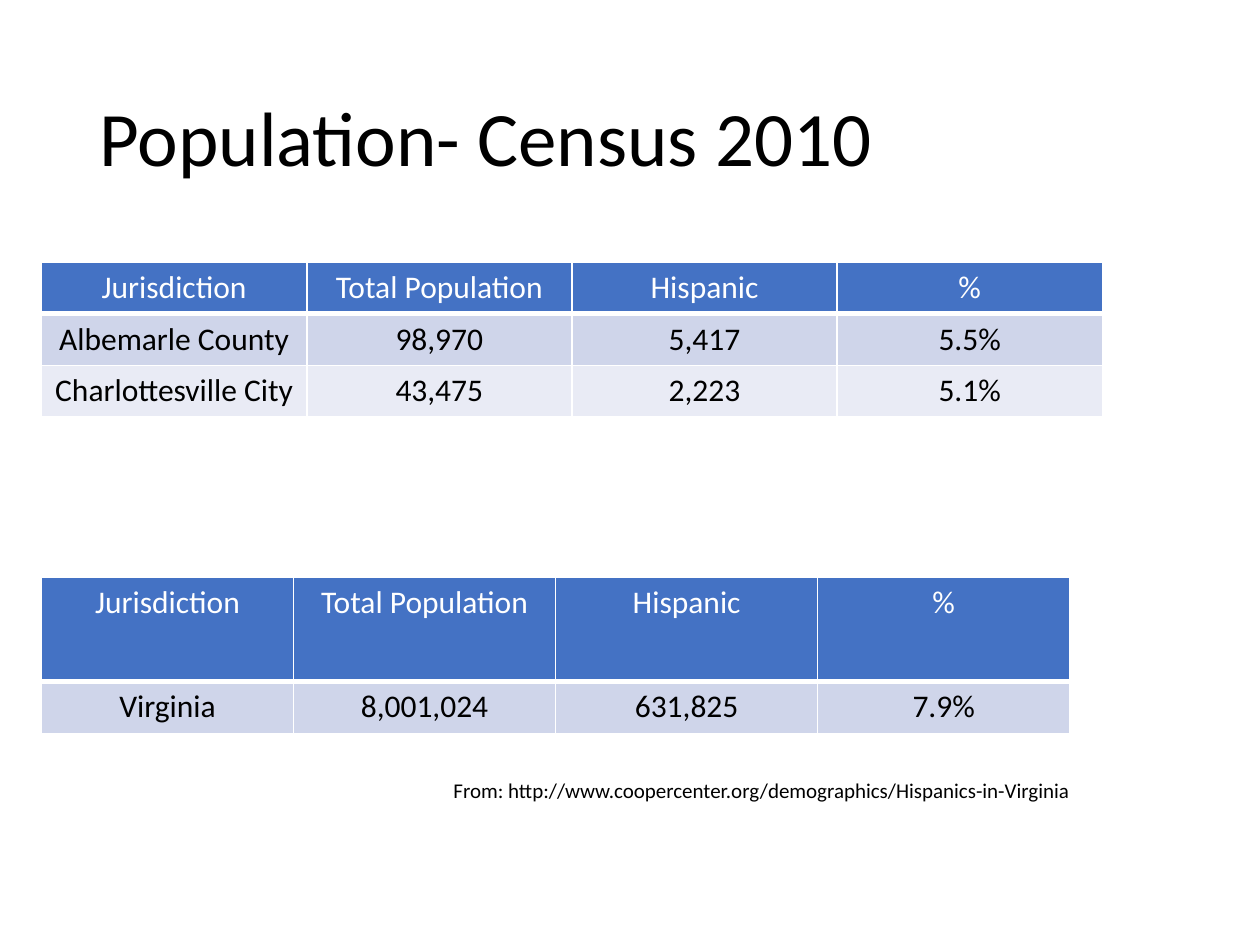
from dataclasses import dataclass

from pptx import Presentation
from pptx import util as u
from pptx.dml.color import RGBColor
from pptx.enum import text
from pptx.oxml import parse_xml
from pptx.oxml.ns import nsdecls


@dataclass(frozen=True)
class Theme:
    font: str = "Calibri"
    ink: str = "000000"
    white: str = "FFFFFF"
    header: str = "4472C4"
    bands: tuple = ("CFD5EA", "E9EBF5")
    title_size: int = 44
    table_size: int = 18
    source_size: int = 12
    thin: int = 1
    thick: int = 3


class SlideBuilder:
    def __init__(self, slide, theme):
        self.slide = slide
        self.theme = theme

    def add_run(self, p, content, size, color):
        r = p.add_run()
        r.text = content
        r.font.name = self.theme.font
        r.font.size = u.Pt(size)
        r.font.bold = False
        r.font.color.rgb = RGBColor.from_string(color)

    def add_text(self, box, content, size, anchor=text.MSO_ANCHOR.TOP, spacing=1.0):
        sp = self.slide.shapes.add_textbox(*map(u.Inches, box))
        tf = sp.text_frame
        tf.word_wrap = True
        tf.vertical_anchor = anchor
        p = tf.paragraphs[0]
        p.line_spacing = spacing
        self.add_run(p, content, size, self.theme.ink)

    def add_borders(self, cell, bottom):
        tc_pr = cell._tc.get_or_add_tcPr()
        thin = self.theme.thin
        for side, width in zip("LRTB", (thin, thin, thin, bottom)):
            tc_pr.append(parse_xml(
                f'<a:ln{side} {nsdecls("a")} w="{u.Pt(width)}"><a:solidFill>'
                f'<a:srgbClr val="{self.theme.white}"/></a:solidFill></a:ln{side}>'))

    def add_table(self, left, top, widths, heights, rows):
        t = self.theme
        box = (left, top, sum(widths), sum(heights))
        frame = self.slide.shapes.add_table(len(rows), len(widths), *map(u.Inches, box))
        table = frame.table
        for column, width in zip(table.columns, widths):
            column.width = u.Inches(width)
        for i, (height, values) in enumerate(zip(heights, rows)):
            table.rows[i].height = u.Inches(height)
            is_header = i == 0
            fill = t.header if is_header else t.bands[(i - 1) % 2]
            for j, value in enumerate(values):
                cell = table.cell(i, j)
                self.add_borders(cell, t.thick if is_header else t.thin)
                cell.fill.solid()
                cell.fill.fore_color.rgb = RGBColor.from_string(fill)
                p = cell.text_frame.paragraphs[0]
                p.alignment = text.PP_ALIGN.CENTER
                self.add_run(p, value, t.table_size, t.white if is_header else t.ink)


def main():
    prs = Presentation()
    prs.slide_width, prs.slide_height = u.Inches(10), u.Inches(7.5)
    theme = Theme()
    s = SlideBuilder(prs.slides.add_slide(prs.slide_layouts[6]), theme)

    # Title
    s.add_text((0.69, 0.4, 8.62, 1.45), "Population- Census 2010",
               theme.title_size, text.MSO_ANCHOR.MIDDLE, 0.9)

    # Local and state population tables
    left, row_height = 0.33, 0.41
    headings = ("Jurisdiction", "Total Population", "Hispanic", "%")
    s.add_table(left, 2.08, [2.105] * 4, [row_height] * 3, [
        headings,
        ("Albemarle County", "98,970", "5,417", "5.5%"),
        ("Charlottesville City", "43,475", "2,223", "5.1%"),
    ])
    s.add_table(left, 4.58, [2, 2.08, 2.08, 2], [0.83, row_height], [
        headings,
        ("Virginia", "8,001,024", "631,825", "7.9%"),
    ])

    # Source line
    s.add_text((3.5, 6.12, 5.92, 0.5),
               "From: http://www.coopercenter.org/demographics/Hispanics-in-Virginia",
               theme.source_size)

    prs.save("out.pptx")


if __name__ == "__main__":
    main()
